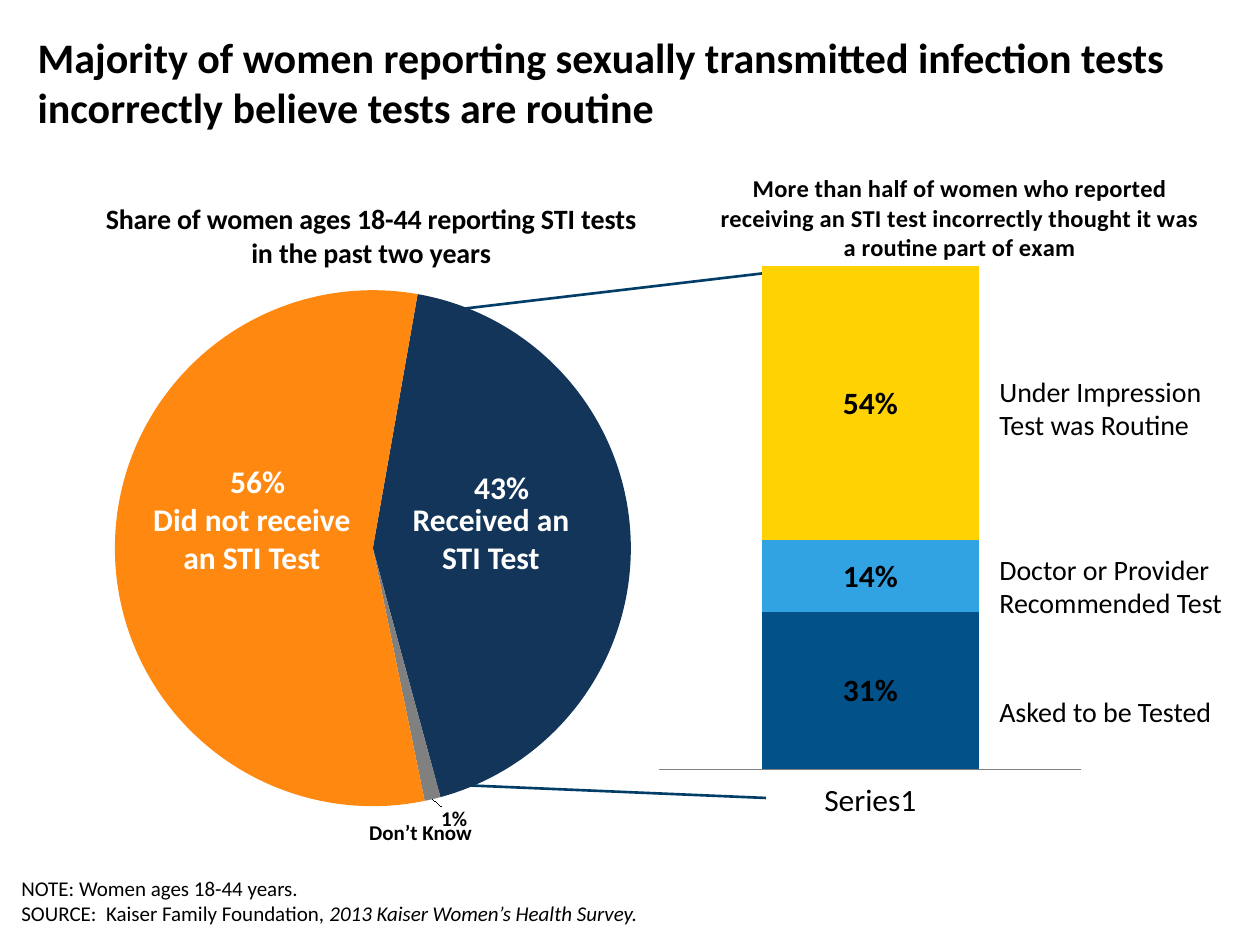
from dataclasses import dataclass

from lxml import etree
from pptx import Presentation
from pptx.chart.data import CategoryChartData
from pptx.dml.color import RGBColor
from pptx.enum.chart import XL_CHART_TYPE, XL_LABEL_POSITION, XL_TICK_LABEL_POSITION, XL_TICK_MARK
from pptx.enum.shapes import MSO_CONNECTOR
from pptx.enum.text import MSO_ANCHOR, MSO_AUTO_SIZE, PP_ALIGN
from pptx.oxml.ns import qn
from pptx.util import Inches, Pt

PIE, STACK = XL_CHART_TYPE.PIE, XL_CHART_TYPE.COLUMN_STACKED_100
CENTER, OUTSIDE = XL_LABEL_POSITION.CENTER, XL_LABEL_POSITION.OUTSIDE_END
LOW, NO_TICK = XL_TICK_LABEL_POSITION.LOW, XL_TICK_MARK.NONE
STRAIGHT = MSO_CONNECTOR.STRAIGHT
TOP, MIDDLE = MSO_ANCHOR.TOP, MSO_ANCHOR.MIDDLE
FIXED = MSO_AUTO_SIZE.NONE
LEFT, MID = PP_ALIGN.LEFT, PP_ALIGN.CENTER
SCALE = Inches(1) / 126


@dataclass(frozen=True)
class Theme:
    """Colours and type sizes of the slide."""
    font: str = "Calibri"
    black: str = "000000"
    white: str = "FFFFFF"
    navy: str = "133559"
    gray: str = "808080"
    orange: str = "FF8811"
    blue: str = "025189"
    sky: str = "31A3E3"
    gold: str = "FFD204"
    link: str = "013D67"
    head: int = 24
    large: int = 18
    body: int = 16
    sub: int = 14
    small: int = 12


THEME = Theme()


def px(*nums):
    """Turn px lengths into EMU."""
    return [round(num * SCALE) for num in nums]


def style(font, size, color=THEME.black, bold=False):
    """Set face, size, colour and weight of a font."""
    font.name, font.size, font.bold = THEME.font, Pt(size), bold
    font.color.rgb = RGBColor.from_string(color)


def paint(part, color):
    """Fill a chart part with one colour."""
    part.format.fill.solid()
    part.format.fill.fore_color.rgb = RGBColor.from_string(color)


def add_text(slide, box, text, size, color=THEME.black, bold=False, align=MID):
    """Add a wrapped text box and return its frame."""
    frame = slide.shapes.add_textbox(*px(*box)).text_frame
    frame.word_wrap = True
    frame.text = text
    for para in frame.paragraphs:
        para.alignment = align
        style(para.font, size, color, bold)
    return frame


def add_link(slide, start, end):
    """Draw a line from the pie to the column."""
    line = slide.shapes.add_connector(STRAIGHT, *px(*start, *end))
    line.line.color.rgb = RGBColor.from_string(THEME.link)
    line.line.width = Pt(1.5)
    etree.SubElement(line._element.spPr, qn("a:effectLst"))


def make_layout(**vals):
    """Make a manual chart layout from tag values."""
    layout = etree.Element(qn("c:layout"))
    manual = etree.SubElement(layout, qn("c:manualLayout"))
    for tag, val in vals.items():
        etree.SubElement(manual, qn("c:" + tag)).set("val", str(val))
    return layout


def add_chart(slide, box, kind, data, title, size, spot, plot):
    """Add a chart with a placed title and plot."""
    chart = slide.shapes.add_chart(kind, *px(*box), data).chart
    style(chart.font, THEME.large)
    chart.has_legend = False
    frame = chart.chart_title.text_frame
    frame.text = title
    style(frame.paragraphs[0].font, size, bold=True)
    root = chart.element.find(qn("c:chart"))
    for tag, layout in (
        ("c:title", make_layout(xMode="edge", yMode="edge", x=spot[0], y=spot[1])),
        ("c:plotArea", make_layout(layoutTarget="inner", xMode="edge", yMode="edge",
                                   x=plot[0], y=plot[1], w=plot[2], h=plot[3])),
    ):
        part = root.find(qn(tag))
        for old in part.findall(qn("c:layout")):
            part.remove(old)
        place = 1 if tag == "c:title" else 0
        part.insert(place, layout)
    return chart


def add_pie(slide, box):
    """Place the pie of tests with its labels."""
    left, top = box[:2]
    data = CategoryChartData()
    data.categories = ["1", "2", "3"]
    data.add_series("Series 1", (43, 1, 56))
    chart = add_chart(slide, box, PIE, data,
                      "Share of women ages 18-44 reporting STI tests in the past two years",
                      THEME.body, (0.11, 0.04), (0.13, 0.18, 0.75, 0.76))
    pie = chart.plots[0]
    pie.vary_by_categories = False
    series = pie.series[0]
    slices = (
        (THEME.navy, THEME.white, THEME.large, CENTER, (0, -0.08)),
        (THEME.gray, THEME.black, THEME.small, OUTSIDE, (0.01, 0)),
        (THEME.orange, THEME.white, THEME.large, CENTER, (0.02, -0.1)),
    )
    for num, (fill, color, size, place, move) in enumerate(slices):
        point = series.points[num]
        paint(point, fill)
        style(point.data_label.font, size, color, True)
        point.data_label.position = place
        label = series._element.findall(".//" + qn("c:dLbl"))[num]
        label.find(qn("c:idx")).addnext(make_layout(x=move[0], y=move[1]))
        label.find(qn("c:showVal")).set("val", "0")
        label.find(qn("c:showPercent")).set("val", "1")
    angle = pie._element.find(qn("c:firstSliceAng"))
    if angle is None:
        angle = etree.SubElement(pie._element, qn("c:firstSliceAng"))
    angle.set("val", "10")
    for x, y, wide, high, text, size, color in (
        (101, 326, 252, 89, "Did not receive an STI Test", THEME.large, THEME.white),
        (356, 326, 220, 89, "Received an STI Test", THEME.large, THEME.white),
        (311, 645, 169, 38, "Don’t Know", THEME.small, THEME.black),
    ):
        add_text(slide, (left + x, top + y, wide, high), text, size, color, True)


def add_stack(slide, box):
    """Place the stacked column with its side labels."""
    left, top = box[:2]
    data = CategoryChartData(number_format="0%")
    data.categories = ["Series1"]
    parts = ((0.31, THEME.blue), (0.14, THEME.sky), (0.54, THEME.gold))
    for num, (share, _) in enumerate(parts, 1):
        data.add_series(f"Series {num}", (share,))
    chart = add_chart(slide, box, STACK, data,
                      "More than half of women who reported receiving an STI test "
                      "incorrectly thought it was a routine part of exam",
                      THEME.sub, (0.17, 0.03), (0.08, 0.18, 0.67, 0.76))
    plot = chart.plots[0]
    plot.gap_width, plot.overlap = 95, 100
    plot.vary_by_categories = False
    for series, (_, color) in zip(plot.series, parts):
        paint(series, color)
        labels = series.data_labels
        labels.show_value, labels.position = True, CENTER
        style(labels.font, THEME.large, bold=True)
    chart.value_axis.visible = False
    chart.value_axis.has_major_gridlines = False
    chart.value_axis.maximum_scale = 1
    axis = chart.category_axis
    axis.major_tick_mark, axis.tick_label_position = NO_TICK, LOW
    axis.format.line.color.rgb = RGBColor.from_string(THEME.gray)
    for y, wide, high, text in (
        (221, 229, 81, "Under Impression Test was Routine"),
        (399, 262, 81, "Doctor or Provider Recommended Test"),
        (541, 262, 47, "Asked to be Tested"),
    ):
        add_text(slide, (left + 378, top + y, wide, high), text, THEME.body, align=LEFT)


def add_head(slide, box):
    """Place the slide title."""
    title = slide.shapes.title
    title.left, title.top, title.width, title.height = px(*box)
    frame = title.text_frame
    frame.text = ("Majority of women reporting sexually transmitted infection tests "
                  "incorrectly believe tests are routine")
    frame.vertical_anchor, frame.auto_size = TOP, FIXED
    frame.paragraphs[0].alignment = LEFT
    style(frame.paragraphs[0].font, THEME.head, bold=True)


def add_note(slide, box):
    """Place the note and source lines."""
    frame = add_text(slide, box, "NOTE: Women ages 18-44 years.\n"
                     "SOURCE:  Kaiser Family Foundation, ", THEME.small, align=LEFT)
    frame.vertical_anchor = MIDDLE
    run = frame.paragraphs[1].add_run()
    run.text = "2013 Kaiser Women’s Health Survey."
    run.font.italic = True


def main():
    """Build and save the slide."""
    deck = Presentation()
    deck.slide_width, deck.slide_height = px(1260, 945)
    slide = deck.slides.add_slide(deck.slide_layouts[5])
    add_head(slide, (25, 25, 1235, 101))
    add_link(slide, (388, 782), (766, 798))
    add_link(slide, (410, 315), (766, 273))
    add_note(slide, (9, 869, 1178, 63))
    add_pie(slide, (25, 168, 689, 679))
    add_stack(slide, (609, 147, 630, 672))
    deck.save("out.pptx")


if __name__ == "__main__":
    main()
